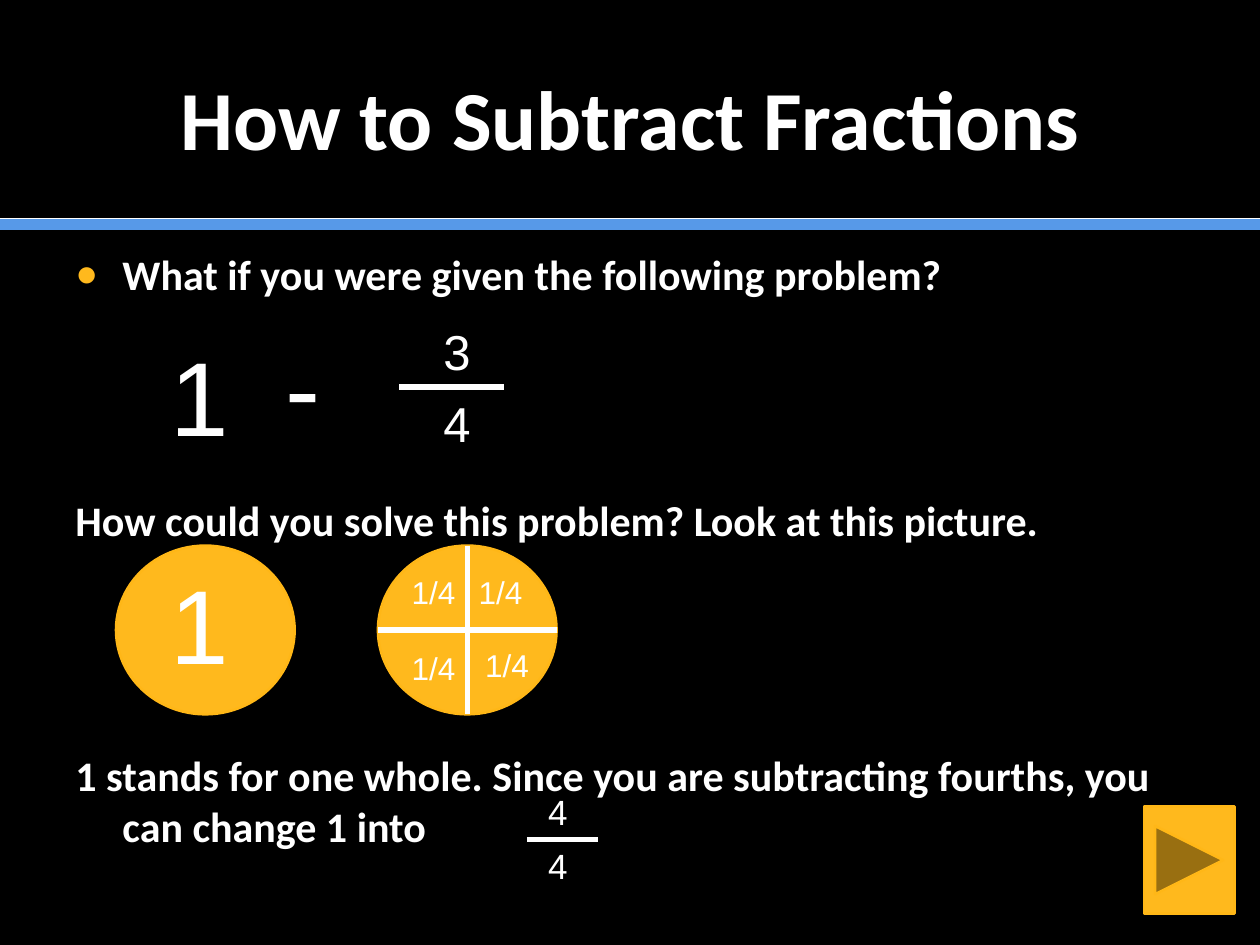
from lxml import etree
from pptx import Presentation
from pptx.dml.color import RGBColor
from pptx.enum.shapes import MSO_CONNECTOR, MSO_SHAPE
from pptx.enum.text import MSO_ANCHOR, MSO_AUTO_SIZE, PP_ALIGN
from pptx.oxml.ns import qn
from pptx.util import Cm, Pt

STRAIGHT = MSO_CONNECTOR.STRAIGHT
OVAL = MSO_SHAPE.OVAL
NEXT_BUTTON = MSO_SHAPE.ACTION_BUTTON_FORWARD_OR_NEXT
MIDDLE, TOP = MSO_ANCHOR.MIDDLE, MSO_ANCHOR.TOP
CENTER, LEFT = PP_ALIGN.CENTER, PP_ALIGN.LEFT
FIT_TEXT, NO_FIT = MSO_AUTO_SIZE.SHAPE_TO_FIT_TEXT, MSO_AUTO_SIZE.NONE

BLACK, WHITE, BLUE = "000000", "FFFFFF", "5799E8"
GOLD, GOLD_EDGE = "FFB91D", "FFB717"
HANGING = Cm(0.95)


def rgb(value):
    """Return the colour for a hex string."""
    return RGBColor.from_string(value)


def apply(obj, **values):
    """Set each attribute in values on obj."""
    for name, value in values.items():
        setattr(obj, name, value)


def write(p, text, size, font="Arial", bold=False):
    """Add a white run to a paragraph."""
    r = p.add_run()
    r.text = text
    apply(r.font, size=Pt(size), name=font, bold=bold)
    r.font.color.rgb = rgb(WHITE)


def add_title(s, text):
    """Place and fill the title placeholder."""
    sp = s.shapes.title
    apply(sp, left=Cm(1.27), top=Cm(0.76), width=Cm(22.86), height=Cm(3.18))
    tf = sp.text_frame
    apply(tf, vertical_anchor=MIDDLE, word_wrap=True, auto_size=NO_FIT)
    p = tf.paragraphs[0]
    p.alignment = CENTER
    write(p, text, 48, "Calibri", True)


def add_bullet(p):
    """Give a paragraph a gold round bullet."""
    pPr = p._p.get_or_add_pPr()
    colour = etree.SubElement(pPr, qn("a:buClr"))
    etree.SubElement(colour, qn("a:srgbClr"), val=GOLD)
    etree.SubElement(pPr, qn("a:buSzPct"), val="90000")
    etree.SubElement(pPr, qn("a:buFont"), typeface="Arial")
    etree.SubElement(pPr, qn("a:buChar"), char="●")


def add_body(s, paragraphs):
    """Add hanging paragraphs from (text, space before, bulleted) rows."""
    sp = s.shapes.add_textbox(Cm(1.27), Cm(4.88), Cm(22.86), Cm(13.54))
    tf = sp.text_frame
    apply(tf, word_wrap=True, vertical_anchor=TOP)
    for i, (text, before, bulleted) in enumerate(paragraphs):
        p = tf.add_paragraph() if i else tf.paragraphs[0]
        apply(p, alignment=LEFT, space_before=Pt(before))
        pPr = p._p.get_or_add_pPr()
        pPr.set("marL", str(HANGING))
        pPr.set("indent", str(-HANGING))
        if bulleted:
            add_bullet(p)
        write(p, text, 24, "Calibri", True)


def add_label(s, text, x, y, w, size):
    """Add one unwrapped line of text."""
    height = Cm(0.25) + Pt(size * 1.2)
    sp = s.shapes.add_textbox(Cm(x), Cm(y), Cm(w), height)
    tf = sp.text_frame
    apply(tf, word_wrap=False, auto_size=FIT_TEXT)
    write(tf.paragraphs[0], text, size)


def add_line(s, x1, y1, x2, y2, colour=WHITE, width=3):
    """Add a straight line without a shadow."""
    c = s.shapes.add_connector(STRAIGHT, Cm(x1), Cm(y1), Cm(x2), Cm(y2))
    c.line.color.rgb = rgb(colour)
    c.line.width = Pt(width)
    etree.SubElement(c._element.spPr, qn("a:effectLst"))


def add_gold_shape(s, kind, x, y, w, h):
    """Add a gold preset shape."""
    sp = s.shapes.add_shape(kind, Cm(x), Cm(y), Cm(w), Cm(h))
    sp.shadow.inherit = False
    sp.fill.solid()
    sp.fill.fore_color.rgb = rgb(GOLD)
    sp.line.color.rgb = rgb(GOLD_EDGE)
    sp.line.width = Pt(1.5)


def add_fraction(s, top, bottom, x, y, w, step, size, bar):
    """Add two stacked digits with a bar given as (start, end, height)."""
    add_label(s, top, x, y, w, size)
    add_label(s, bottom, x, y + step, w, size)
    start, end, height = bar
    add_line(s, start, height, end, height)


def add_quartered_circle(s, x, y, w, h):
    """Add a circle cut into four labelled quarters."""
    add_gold_shape(s, OVAL, x, y, w, h)
    add_line(s, x + w / 2, y, x + w / 2, y + h)
    add_line(s, x, y + h / 2, x + w, y + h / 2)
    for left, top in ((8.05, 11.43), (9.4, 11.43), (8.05, 12.95), (9.53, 12.9)):
        add_label(s, "1/4", left, top, 1.4, 18)


def main():
    """Build the slide and save it."""
    prs = Presentation()
    apply(prs, slide_width=Cm(25.4), slide_height=Cm(19.05))
    s = prs.slides.add_slide(prs.slide_layouts[5])
    s.background.fill.solid()
    s.background.fill.fore_color.rgb = rgb(BLACK)

    add_line(s, 0, 4.52, 25.4, 4.52, BLUE, 7)
    add_line(s, 0, 4.4, 25.4, 4.4, WHITE, 0.5)
    add_title(s, "How to Subtract Fractions")
    add_body(s, [
        ("What if you were given the following problem?", 0, True),
        ("How could you solve this problem? Look at this picture.", 112, False),
        ("1 stands for one whole. Since you are subtracting fourths, "
         "you can change 1 into", 117, False),
    ])

    add_label(s, "1", 3.18, 6.55, 1.7, 60)
    add_label(s, "-", 5.51, 6.35, 1.22, 60)
    add_fraction(s, "3", "4", 8.69, 6.35, 1.07, 1.45, 28, (8.05, 10.16, 7.8))

    add_gold_shape(s, OVAL, 2.34, 11, 3.6, 3.4)
    add_label(s, "1", 3.18, 11.15, 1.7, 60)
    add_quartered_circle(s, 7.62, 11, 3.6, 3.4)

    add_fraction(s, "4", "4", 10.8, 15.82, 0.84, 1.07, 20, (10.62, 12.06, 16.93))
    add_gold_shape(s, NEXT_BUTTON, 23.06, 16.26, 1.83, 2.16)
    prs.save("out.pptx")


if __name__ == "__main__":
    main()
